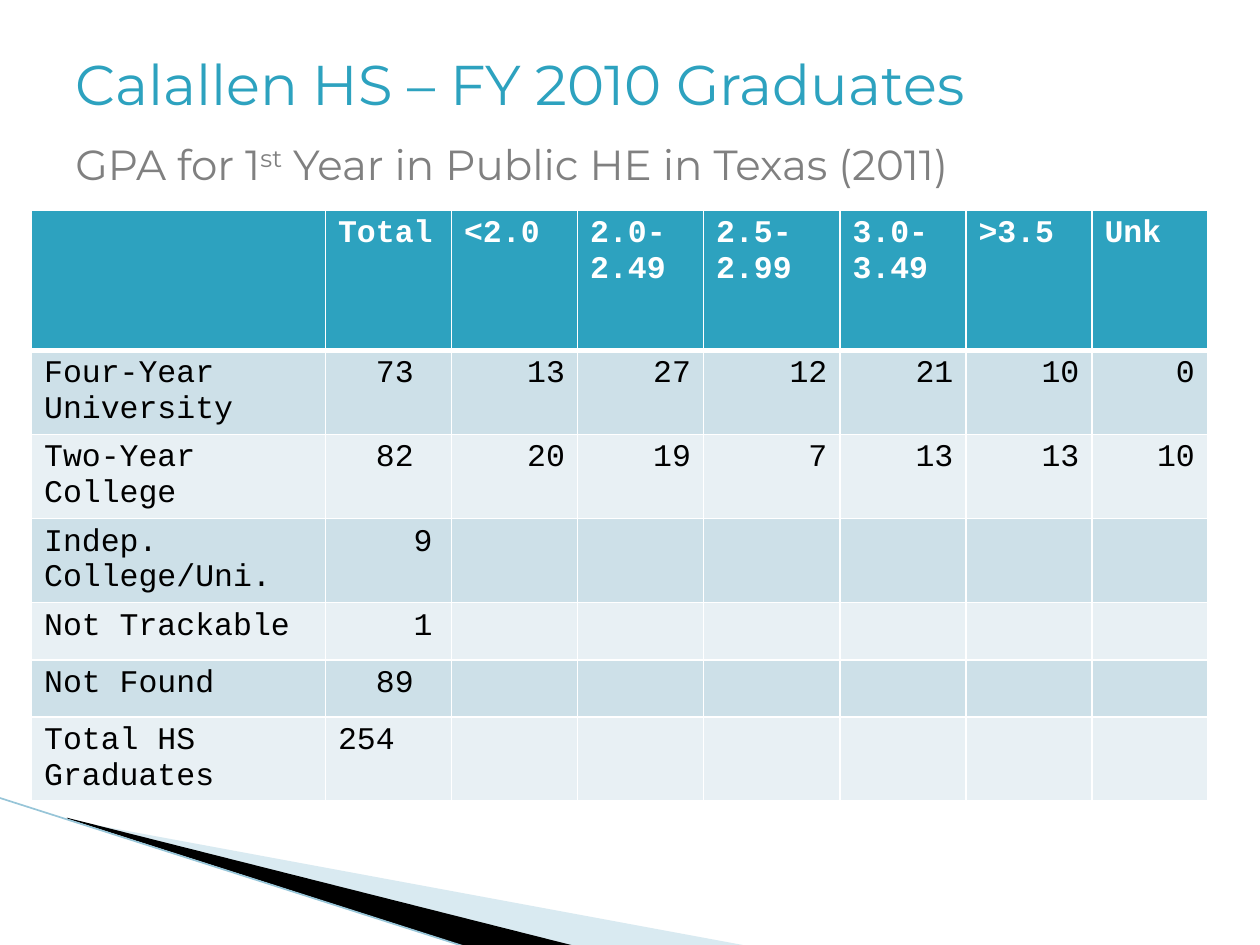
from lxml import etree
from pptx import Presentation, util as u
from pptx.dml.color import RGBColor
from pptx.enum import shapes, text
from pptx.oxml.ns import qn

Pt = u.Pt
TEAL, GRAY, WHITE, BLACK = "2DA2BF", "808080", "FFFFFF", "000000"
BANDS = ("CDE0E8", "E8F0F4")

TITLE = [("Calallen HS – FY 2010 Graduates", False)]
SUBTITLE = [("GPA for 1", False), ("st", True),
            (" Year in Public HE in Texas (2011)", False)]
HEADER = ["", "Total", "<2.0", "2.0-2.49", "2.5-\n2.99", "3.0-3.49", ">3.5", "Unk"]
# Label, total, indent of the total in characters, GPA counts
ROWS = [
    ("Four-Year University", "73", 2, ["13", "27", "12", "21", "10", "0"]),
    ("Two-Year College", "82", 2, ["20", "19", "7", "13", "13", "10"]),
    ("Indep. College/Uni.", "9", 4, []),
    ("Not Trackable", "1", 4, []),
    ("Not Found", "89", 2, []),
    ("Total HS Graduates", "254", 0, []),
]
COLUMN_WIDTHS = [168, 72, 72, 72, 78, 72, 72, 66]
ROW_HEIGHTS = [80, 48, 48, 48, 32.7, 32.7, 48]
CHARACTER_WIDTH = 10.8

# Corners, colour, opacity in percent
WEDGES = [
    ([(39.6, 468.7), (428.4, 540.7), (328.3, 540.7), (39.6, 468)], "A0CBDC", 40),
    ([(38.2, 467.3), (329, 540.7), (267.8, 541.4), (38.9, 468)], BLACK, 100),
]
EDGE = [(-0.7, 455.8), (267.1, 541.4)]


def color(value):
    return RGBColor.from_string(value)


def add_wedge(slide, corners, fill, opacity):
    points = [(Pt(x), Pt(y)) for x, y in corners]
    builder = slide.shapes.build_freeform(*points[0], scale=1.0)
    builder.add_line_segments(points[1:], close=True)
    shape = builder.convert_to_shape()
    shape.shadow.inherit = False
    shape.line.fill.background()
    shape.fill.solid()
    shape.fill.fore_color.rgb = color(fill)
    if opacity < 100:
        value = shape._element.spPr.find(".//" + qn("a:srgbClr"))
        etree.SubElement(value, qn("a:alpha"), val=str(opacity * 1000))


def add_edge(slide):
    (x1, y1), (x2, y2) = EDGE
    line = slide.shapes.add_connector(
        shapes.MSO_CONNECTOR.STRAIGHT, Pt(x1), Pt(y1), Pt(x2), Pt(y2))
    line.line.color.rgb = color("97C5D8")
    line.line.width = Pt(0.95)
    etree.SubElement(line._element.spPr, qn("a:effectLst"))


def set_borders(cell, **widths):
    properties = cell._tc.get_or_add_tcPr()
    for side in "LRTB":
        border = etree.SubElement(properties, qn("a:ln" + side),
                                  w=str(Pt(widths.get(side, 1))))
        fill = etree.SubElement(border, qn("a:solidFill"))
        etree.SubElement(fill, qn("a:srgbClr"), val=WHITE)


def fill_cell(cell, content, row, column, indent):
    if row == 0:
        set_borders(cell, B=3)
    else:
        set_borders(cell, T=3 if row == 1 else 1)
    cell.fill.solid()
    cell.fill.fore_color.rgb = color(BANDS[(row - 1) % 2] if row else TEAL)
    cell.text_frame.text = content
    for paragraph in cell.text_frame.paragraphs:
        if row and column > 1:
            paragraph.alignment = text.PP_ALIGN.RIGHT
        if indent:
            paragraph._p.get_or_add_pPr().set(
                "marL", str(Pt(indent * CHARACTER_WIDTH)))
        paragraph.font.size = Pt(18)
        for run in paragraph.runs:
            run.font.name = "Courier New"
            run.font.size = Pt(18)
            run.font.bold = row == 0
            run.font.color.rgb = color(BLACK if row else WHITE)


def add_gpa_table(slide):
    frame = slide.shapes.add_table(
        len(ROW_HEIGHTS), len(COLUMN_WIDTHS), Pt(18), Pt(120.2),
        Pt(sum(COLUMN_WIDTHS)), Pt(sum(ROW_HEIGHTS)))
    table = frame.table
    table.horz_banding = False
    for column, width in zip(table.columns, COLUMN_WIDTHS):
        column.width = Pt(width)
    for row, height in zip(table.rows, ROW_HEIGHTS):
        row.height = Pt(height)
    lines = [(HEADER, 0)]
    for label, total, indent, counts in ROWS:
        padding = [""] * (len(HEADER) - 2 - len(counts))
        lines.append(([label, total] + counts + padding, indent))
    for r, (values, indent) in enumerate(lines):
        for c, value in enumerate(values):
            fill_cell(table.cell(r, c), value, r, c, indent if c == 1 else 0)


def write_heading(paragraph, parts, size, value):
    for content, raised in parts:
        run = paragraph.add_run()
        run.text = content
        run.font.name = "Montserrat"
        run.font.size = Pt(size)
        run.font.color.rgb = color(value)
        if raised:
            run.font._element.set("baseline", "30000")


def add_headings(slide):
    box = slide.shapes.add_textbox(Pt(36), Pt(23.8), Pt(648), Pt(88.6))
    frame = box.text_frame
    frame.word_wrap = True
    frame.vertical_anchor = text.MSO_ANCHOR.MIDDLE
    write_heading(frame.paragraphs[0], TITLE, 32, TEAL)
    subtitle = frame.add_paragraph()
    subtitle.space_before = Pt(12)
    write_heading(subtitle, SUBTITLE, 24, GRAY)


def main():
    presentation = Presentation()
    presentation.slide_width, presentation.slide_height = Pt(720), Pt(540)
    slide = presentation.slides.add_slide(presentation.slide_layouts[6])
    for wedge in WEDGES:
        add_wedge(slide, *wedge)
    add_edge(slide)
    add_gpa_table(slide)
    add_headings(slide)
    presentation.save("out.pptx")


if __name__ == "__main__":
    main()
